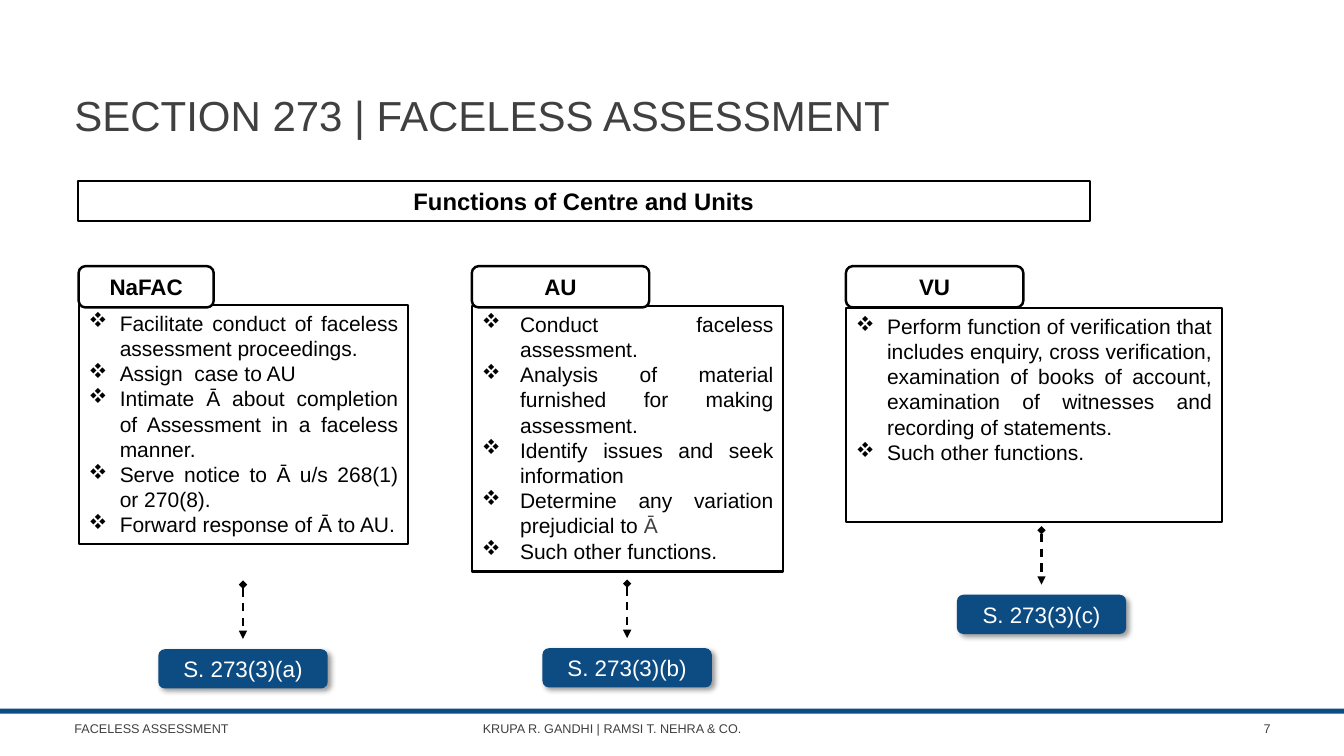
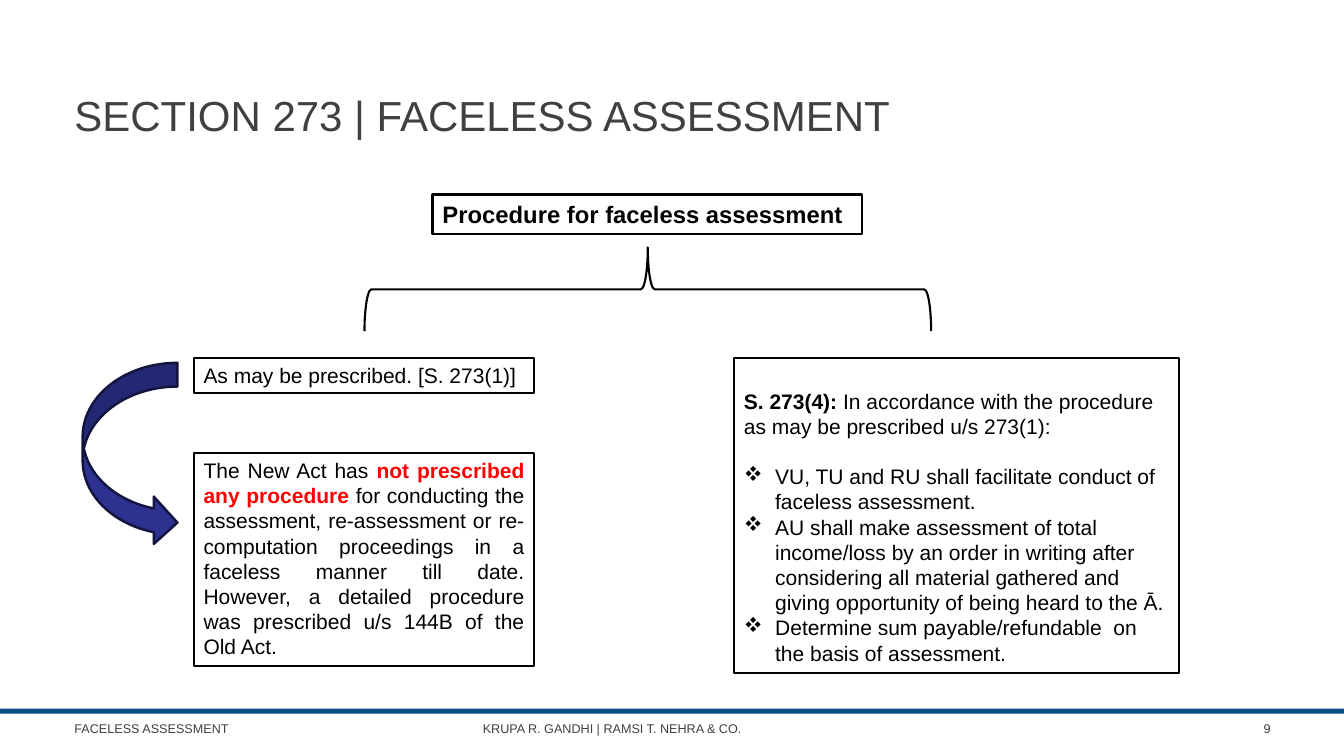
from pptx import Presentation
from pptx.dml.color import RGBColor as Rgb
from pptx.enum.dml import MSO_LINE as Dash
from pptx.enum.shapes import MSO_CONNECTOR as Conn, MSO_SHAPE as Kind
from pptx.enum.text import MSO_ANCHOR as Anchor, PP_ALIGN as Align
from pptx.oxml.ns import qn
from pptx.util import Inches, Pt
from lxml.etree import SubElement as Sub

HUES = {"ink": "000000", "grey": "404040", "blue": "0D4C83", "white": "FFFFFF",
        "red": "FF0000", "navy": "2D3190", "night": "14153F"}
TITLE = "SECTION 273 | FACELESS ASSESSMENT"
FOOT = ((0.64, "FACELESS ASSESSMENT"),
        (4.69, "KRUPA R. GANDHI | RAMSI T. NEHRA & CO."))

# label, label width, box (left, top, width, height), indent, button (centre, top, text), duties
UNITS = [
    ("NaFAC", 1.34, (0.78, 3.03, 3.27, 2.37), 0.31, (2.41, 6.44, "S. 273(3)(a)"), [
        "Facilitate conduct of faceless assessment proceedings.",
        "Assign  case to AU",
        "Intimate Ā about completion of Assessment in a faceless manner.",
        "Serve notice to Ā u/s 268(1) or 270(8).",
        "Forward response of Ā to AU."]),
    ("AU", 1.76, (4.68, 3.04, 3.09, 2.63), 0.38, (6.22, 6.43, "S. 273(3)(b)"), [
        "Conduct faceless assessment.",
        "Analysis of material furnished for making assessment.",
        "Identify issues and seek information",
        [("Determine any variation prejudicial to ", "ink", False), ("Ā", "grey", False)],
        "Such other functions."]),
    ("VU", 1.76, (8.39, 3.06, 3.73, 2.12), 0.31, (10.33, 5.9, "S. 273(3)(c)"), [
        "Perform function of verification that includes enquiry, cross verification, "
        "examination of books of account, examination of witnesses and recording of "
        "statements.",
        "Such other functions."]),
]
PLAN = [
    "VU, TU and RU shall facilitate conduct of faceless assessment.",
    "AU shall make assessment of total income/loss by an order in writing after "
    "considering all material gathered and giving opportunity of being heard to the Ā.",
    "Determine sum payable/refundable  on the basis of assessment.",
]
LEAD = [("S. 273(4): ", "ink", True),
        ("In accordance with the procedure as may be prescribed u/s 273(1):", "ink", False)]
NOTE = [("The New Act has ", "ink", False),
        ("not prescribed any procedure ", "red", True),
        ("for conducting the assessment, re-assessment or re-computation proceedings in a "
         "faceless manner till date. However, a detailed procedure was prescribed u/s 144B "
         "of the Old Act.", "ink", False)]


def hue(name):
    return Rgb.from_string(HUES[name])


class Deck:
    face = "Arial"
    body = 15
    pitch = Pt(18)

    def __init__(self):
        self.show = Presentation()
        self.show.slide_width = Inches(13.33)
        self.show.slide_height = Inches(7.5)
        self.slide = None

    def page(self, num):
        """Start a slide with the shared title, band and footer."""
        self.slide = self.show.slides.add_slide(self.show.slide_layouts[6])
        self.shape(Kind.RECTANGLE, (0, 7.03, 13.33, 0.05), fill="blue")
        for left, text in FOOT:
            self.label((left, 7.03, 3.6, 0.4), text, 9)
        self.label((11.55, 7.03, 1.15, 0.4), str(num), 9, Align.RIGHT)
        self.label((0.64, 0.6, 12.06, 1.08), TITLE, 30)

    def shape(self, kind, at, fill=None, line=None, width=1.5):
        item = self.slide.shapes.add_shape(kind, *map(Inches, at))
        item.shadow.inherit = False
        if fill:
            item.fill.solid()
            item.fill.fore_color.rgb = hue(fill)
        else:
            item.fill.background()
        if line:
            item.line.color.rgb = hue(line)
            item.line.width = Pt(width)
        else:
            item.line.fill.background()
        return item

    def text(self, par, text, size, tint="ink", bold=False, align=Align.LEFT):
        """Fill a paragraph with a string, or with (text, tint, bold) runs."""
        par.alignment = align
        font = par.font
        font.name, font.size = self.face, Pt(size)
        if isinstance(text, str):
            par.add_run().text = text
            font.bold, font.color.rgb = bold, hue(tint)
            return
        for words, shade, heavy in text:
            run = par.add_run()
            run.text = words
            run.font.bold, run.font.color.rgb = heavy, hue(shade)

    def line(self, item, text, size, **style):
        """Put one vertically centred line of text in a shape."""
        frame = item.text_frame
        frame.word_wrap = True
        frame.vertical_anchor = Anchor.MIDDLE
        self.text(frame.paragraphs[0], text, size, **style)

    def label(self, at, text, size, align=Align.LEFT):
        item = self.slide.shapes.add_textbox(*map(Inches, at))
        self.line(item, text, size, tint="grey", align=align)

    def head(self, at, text, align):
        item = self.shape(Kind.RECTANGLE, at, line="ink")
        self.line(item, text, 17, bold=True, align=align)

    def tag(self, at, text):
        item = self.shape(Kind.ROUNDED_RECTANGLE, at, "white", "ink", 1.75)
        self.line(item, text, 16, bold=True, align=Align.CENTER)

    def panel(self, at, lead=None, items=(), indent=0.31, align=Align.JUSTIFY, inset=0.05):
        """Draw a framed box with an optional lead paragraph and bullets."""
        frame = self.shape(Kind.RECTANGLE, at, line="ink").text_frame
        frame.word_wrap = True
        frame.vertical_anchor = Anchor.TOP
        frame.margin_top = Inches(inset)
        texts = ([lead] if lead else []) + list(items)
        for pos, text in enumerate(texts):
            par = frame.paragraphs[0] if pos == 0 else frame.add_paragraph()
            par.line_spacing = self.pitch
            if lead and pos == 1:
                par.space_before = self.pitch
            if not lead or pos:
                self.bullet(par, indent)
            self.text(par, text, self.body, align=align)

    def bullet(self, par, indent):
        props = par._p.get_or_add_pPr()
        props.set("marL", str(Inches(indent)))
        props.set("indent", str(-Inches(indent)))
        Sub(props, qn("a:buFont"), typeface="Wingdings")
        Sub(props, qn("a:buChar"), char="v")

    def button(self, mid, top, text):
        item = self.shape(Kind.ROUNDED_RECTANGLE, (mid - 0.84, top, 1.68, 0.39), "blue")
        glow = item._element.spPr.find(qn("a:effectLst"))
        shade = Sub(glow, qn("a:outerShdw"), blurRad=str(Pt(4)), dist=str(Pt(3)),
                    dir="2700000", algn="tl", rotWithShape="0")
        tone = Sub(shade, qn("a:srgbClr"), val=HUES["ink"])
        Sub(tone, qn("a:alpha"), val="40000")
        self.line(item, text, 16, tint="white", align=Align.CENTER)

    def arrow(self, mid, top, end):
        item = self.slide.shapes.add_connector(
            Conn.STRAIGHT, *map(Inches, (mid, top, mid, end)))
        item.line.color.rgb = hue("ink")
        item.line.width = Pt(1.5)
        item.line.dash_style = Dash.DASH
        props = item._element.spPr
        stroke = props.find(qn("a:ln"))
        Sub(stroke, qn("a:headEnd"), type="diamond")
        Sub(stroke, qn("a:tailEnd"), type="triangle")
        Sub(props, qn("a:effectLst"))


def units(deck):
    deck.page(7)
    deck.head((0.77, 1.8, 10.04, 0.39), "Functions of Centre and Units", Align.CENTER)
    for name, width, box, indent, (mid, top, text), duties in UNITS:
        deck.panel(box, items=duties, indent=indent)
        deck.tag((box[0], 2.64, width, 0.41), name)
        deck.arrow(mid, top - 0.64, top - 0.1)
        deck.button(mid, top, text)


def steps(deck):
    deck.page(9)
    deck.head((4.29, 1.93, 4.26, 0.39), "Procedure for faceless assessment", Align.JUSTIFY)
    brace = deck.shape(Kind.RIGHT_BRACE, (6.01, 0.06, 0.83, 5.62), line="ink")
    brace.rotation = 270
    deck.panel((1.92, 3.55, 3.38, 0.35), "As may be prescribed. [S. 273(1)]")
    deck.panel((7.28, 3.55, 4.41, 3.13), LEAD, PLAN, align=Align.LEFT, inset=0.3)
    deck.shape(Kind.CURVED_RIGHT_ARROW, (0.82, 3.6, 0.94, 1.82), "navy", "night", 1.75)
    deck.panel((1.92, 4.49, 3.38, 2.12), NOTE)


def main():
    deck = Deck()
    units(deck)
    steps(deck)
    deck.show.save("out.pptx")


if __name__ == "__main__":
    main()
